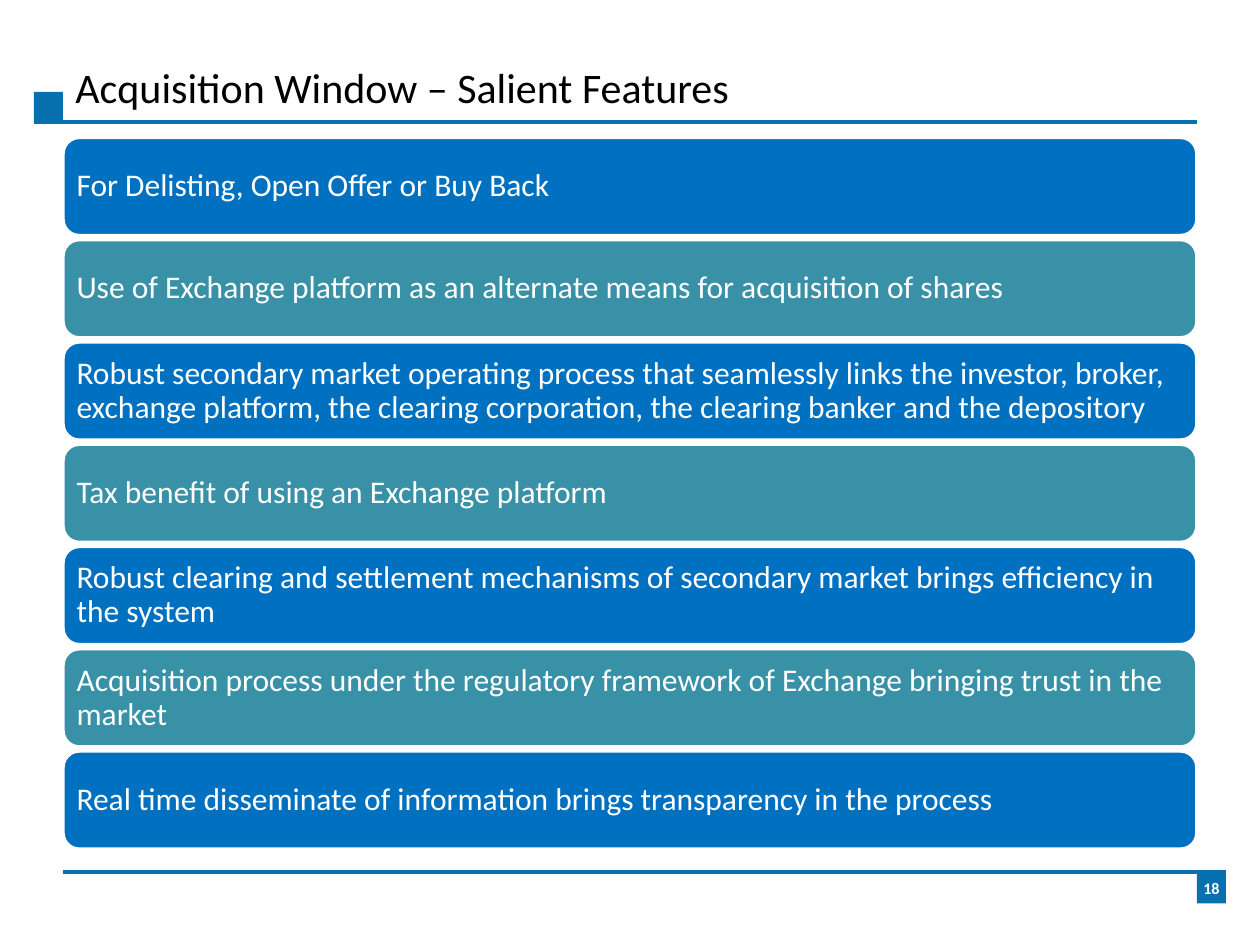
"""Build the slide on the salient features of the acquisition window."""
from dataclasses import dataclass

import lxml.etree
import pptx
import pptx.dml.color
import pptx.enum.shapes
import pptx.enum.text
import pptx.oxml.ns
import pptx.util

Inches = pptx.util.Inches
Kind = pptx.enum.shapes.MSO_SHAPE
Anchor = pptx.enum.text.MSO_ANCHOR
Align = pptx.enum.text.PP_ALIGN

ACCENT, BLUE, TEAL, WHITE, BLACK = "0771B0", "0070C0", "3891A7", "FFFFFF", "000000"
LEFT, WIDTH, HEIGHT = 0.5, 9, 0.78
FIRST, LAST = 1.09, 5.96
ITEMS = [
    "For Delisting, Open Offer or Buy Back",
    "Use of Exchange platform as an alternate means for acquisition of shares",
    "Robust secondary market operating process that seamlessly links the investor, broker, "
    "exchange platform, the clearing corporation, the clearing banker and the depository",
    "Tax benefit of using an Exchange platform",
    "Robust clearing and settlement mechanisms of secondary market brings efficiency in the system",
    "Acquisition process under the regulatory framework of Exchange bringing trust in the market",
    "Real time disseminate of information brings transparency in the process",
]


@dataclass
class Box:
    left: float
    top: float
    width: float
    height: float

    def frame(self) -> list:
        return [Inches(v) for v in (self.left, self.top, self.width, self.height)]


@dataclass
class Style:
    size: float
    color: str = WHITE
    bold: bool = False
    inset: float = 0.07
    anchor: Anchor = Anchor.MIDDLE
    align: Align = Align.LEFT
    space: float = 0.9
    wrap: bool = True


def tint(code: str) -> pptx.dml.color.RGBColor:
    return pptx.dml.color.RGBColor.from_string(code)


def write(shape, text: str, style: Style) -> None:
    frame = shape.text_frame
    inset = Inches(style.inset)
    layout = {
        "word_wrap": style.wrap, "vertical_anchor": style.anchor,
        "margin_left": inset, "margin_right": inset,
        "margin_top": inset, "margin_bottom": inset,
    }
    for name, value in layout.items():
        setattr(frame, name, value)
    para = frame.paragraphs[0]
    para.alignment, para.line_spacing = style.align, style.space
    run = para.add_run()
    run.text = text
    looks = {"name": "Calibri", "size": pptx.util.Pt(style.size), "bold": style.bold}
    for name, value in looks.items():
        setattr(run.font, name, value)
    run.font.color.rgb = tint(style.color)


def block(slide, kind: Kind, box: Box, fill: str, edge: float = 0):
    shape = slide.shapes.add_shape(kind, *box.frame())
    shape.shadow.inherit = False
    shape.fill.solid()
    shape.fill.fore_color.rgb = tint(fill)
    if edge:
        shape.line.color.rgb = tint(WHITE)
        shape.line.width = pptx.util.Pt(edge)
    else:
        shape.line.fill.background()
    return shape


def rule(slide, start: float, end: float, top: float) -> None:
    line = slide.shapes.add_connector(
        pptx.enum.shapes.MSO_CONNECTOR.STRAIGHT,
        Inches(start), Inches(top), Inches(end), Inches(top))
    line.line.color.rgb = tint(ACCENT)
    line.line.width = pptx.util.Pt(2.5)
    lxml.etree.SubElement(line._element.spPr, pptx.oxml.ns.qn("a:effectLst"))


def main() -> None:
    deck = pptx.Presentation()
    deck.slide_width, deck.slide_height = Inches(10), Inches(7.5)
    slide = deck.slides.add_slide(deck.slide_layouts[6])

    rule(slide, 0.27, 9.5, 0.97)
    block(slide, Kind.RECTANGLE, Box(0.27, 0.73, 0.23, 0.25), ACCENT)
    rule(slide, 0.5, 9.73, 6.92)

    pitch = (LAST - FIRST) / (len(ITEMS) - 1)
    for row, text in enumerate(ITEMS):
        box = Box(LEFT, FIRST + row * pitch, WIDTH, HEIGHT)
        bar = block(slide, Kind.ROUNDED_RECTANGLE, box, (BLUE, TEAL)[row % 2], 2)
        write(bar, text, Style(18))

    title = slide.shapes.add_textbox(*Box(0.5, 0.16, 7.58, 0.83).frame())
    write(title, "Acquisition Window – Salient Features",
          Style(24, BLACK, inset=0.1, anchor=Anchor.BOTTOM))

    badge = block(slide, Kind.RECTANGLE, Box(9.5, 6.92, 0.23, 0.25), ACCENT)
    write(badge, "18", Style(9.2, bold=True, inset=0, align=Align.CENTER, space=1.0, wrap=False))

    deck.save("out.pptx")


if __name__ == "__main__":
    main()
